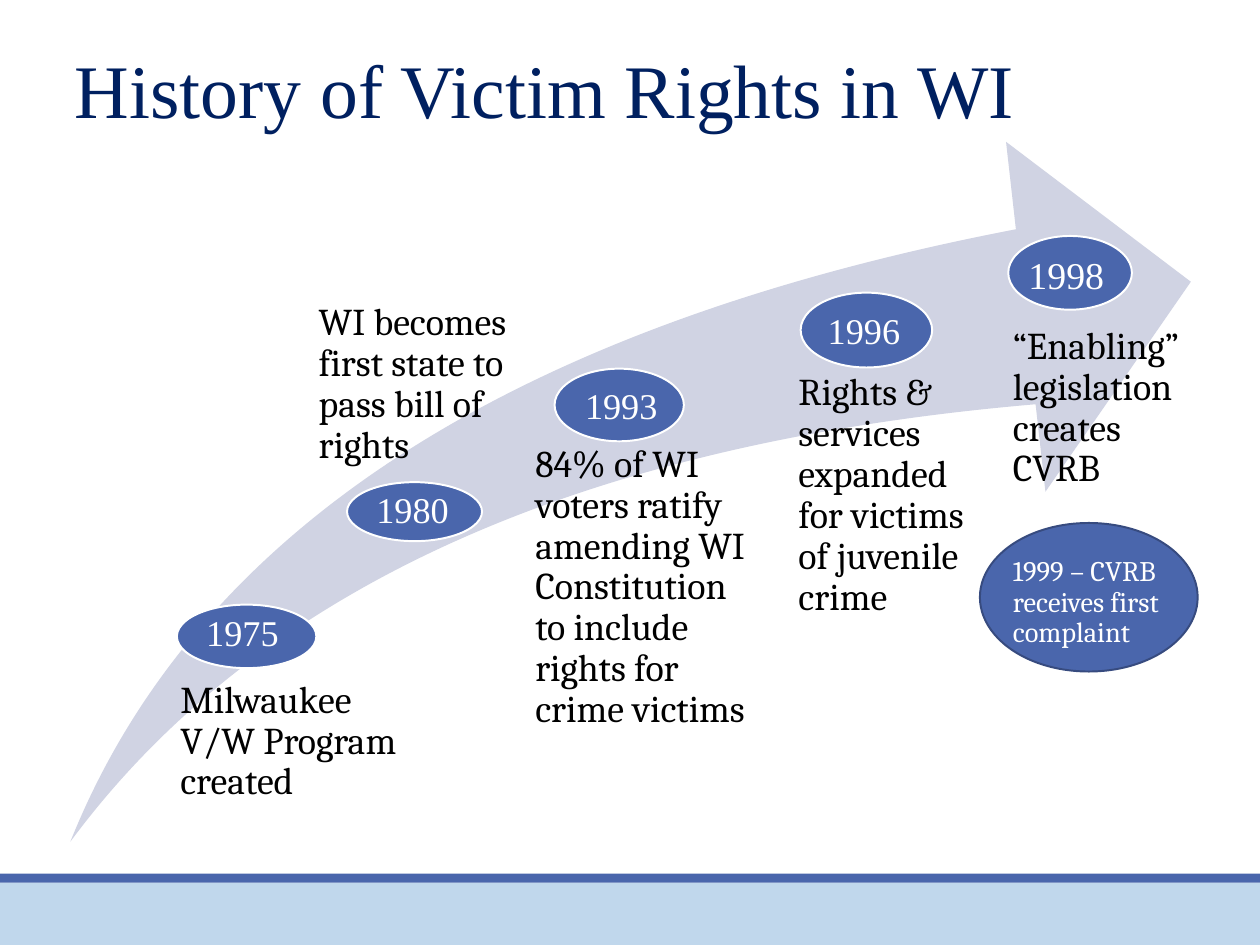
from dataclasses import dataclass

from pptx import Presentation
from pptx.dml.color import RGBColor
from pptx.enum import shapes, text
from pptx.util import Inches, Pt

SLIDE_W, SLIDE_H = 11.11, 8.33
BLUE, PALE_BLUE, SWOOSH = "4A66AC", "C0D7EC", "D0D3E3"
WHITE, BLACK, NAVY, DARK_BLUE = "FFFFFF", "000000", "002060", "374B7F"
SERIF, BODY = "Times New Roman", "Cambria"
Box = tuple[float, float, float, float]


@dataclass
class Milestone:
    year: str
    event: str
    marker: Box
    year_box: Box
    event_box: Box
    indent: float
    year_size: int = 23


MILESTONES = [
    Milestone("1975", "Milwaukee V/W Program created", (1.56, 5.33, 1.23, 0.56),
              (1.72, 5.33, 0.92, 0.5), (1.47, 6, 2.08, 1.26), 0.12),
    Milestone("1980", "WI becomes first state to pass bill of rights",
              (3.06, 4.25, 1.19, 0.52), (3.22, 4.25, 0.92, 0.49),
              (2.62, 2.67, 1.98, 2.59), 0.19),
    Milestone("1993", "84% of WI voters ratify amending WI Constitution "
              "to include rights for crime victims", (4.89, 3.25, 1.14, 0.64),
              (5.06, 3.33, 0.88, 0.5), (4.47, 3.92, 2.26, 3.47), 0.25),
    Milestone("1996", "Rights & services expanded for victims of juvenile crime",
              (7.06, 2.58, 1.16, 0.66), (7.2, 2.67, 0.88, 0.49),
              (6.72, 3.29, 1.98, 4.14), 0.32),
    Milestone("1998", "“Enabling” legislation creates CVRB",
              (8.89, 2.08, 1.09, 0.65), (8.97, 2.17, 0.88, 0.5),
              (8.52, 2.88, 1.98, 4.54), 0.41, 24),
]


def rgb(value: str) -> RGBColor:
    return RGBColor.from_string(value)


def inches(box: Box) -> list:
    return [Inches(length) for length in box]


def add_filled(slide, kind, box: Box, fill: str, outline: str | None = None):
    shape = slide.shapes.add_shape(kind, *inches(box))
    shape.shadow.inherit = False
    shape.fill.solid()
    shape.fill.fore_color.rgb = rgb(fill)
    if outline:
        shape.line.color.rgb = rgb(outline)
        shape.line.width = Pt(1.25)
    else:
        shape.line.fill.background()
    return shape


def write(shape, wording: str, size: int, font: str, color: str,
          insets: Box = (0.1, 0.05, 0.1, 0.05), spacing: float = 1.0,
          anchor=text.MSO_ANCHOR.TOP) -> None:
    frame = shape.text_frame
    frame.text = wording
    left, top, right, bottom = inches(insets)
    paragraph = frame.paragraphs[0]
    frame_format = dict(word_wrap=True, vertical_anchor=anchor, margin_left=left,
                        margin_top=top, margin_right=right, margin_bottom=bottom)
    paragraph_format = dict(alignment=text.PP_ALIGN.LEFT, line_spacing=spacing)
    font_format = dict(size=Pt(size), name=font)
    run_font = paragraph.runs[0].font
    for target, values in ((frame, frame_format), (paragraph, paragraph_format),
                           (run_font, font_format)):
        for attribute, value in values.items():
            setattr(target, attribute, value)
    run_font.color.rgb = rgb(color)


def add_milestone(slide, milestone: Milestone) -> None:
    add_filled(slide, shapes.MSO_SHAPE.OVAL, milestone.marker, BLUE, WHITE)
    event = slide.shapes.add_textbox(*inches(milestone.event_box))
    write(event, milestone.event, 24, BODY, BLACK, (milestone.indent, 0, 0, 0), 0.9)
    year = slide.shapes.add_textbox(*inches(milestone.year_box))
    write(year, milestone.year, milestone.year_size, SERIF, WHITE)


def main() -> None:
    deck = Presentation()
    deck.slide_width, deck.slide_height = Inches(SLIDE_W), Inches(SLIDE_H)
    slide = deck.slides.add_slide(deck.slide_layouts.get_by_name("Title Only"))

    title = slide.shapes.title
    title.left, title.top, title.width, title.height = inches((0.56, 0.33, 8.75, 0.91))
    write(title, "History of Victim Rights in WI", 48, SERIF, NAVY)

    for top, height, fill in ((7.78, 0.55, PALE_BLUE), (7.7, 0.08, BLUE)):
        add_filled(slide, shapes.MSO_SHAPE.RECTANGLE, (0, top, SLIDE_W, height), fill)

    complaint = add_filled(slide, shapes.MSO_SHAPE.OVAL, (8.64, 4.61, 1.92, 1.31),
                           BLUE, DARK_BLUE)
    write(complaint, "1999 – CVRB receives first complaint", 18, BODY, WHITE,
          (0.01, 0.1, 0, 0), 0.9, text.MSO_ANCHOR.MIDDLE)

    swoosh = add_filled(slide, shapes.MSO_SHAPE.SWOOSH_ARROW,
                        (0.62, 1.25, 9.88, 6.17), SWOOSH)
    swoosh.adjustments[0] = swoosh.adjustments[1] = 0.25

    for milestone in MILESTONES:
        add_milestone(slide, milestone)

    deck.save("out.pptx")


if __name__ == "__main__":
    main()
